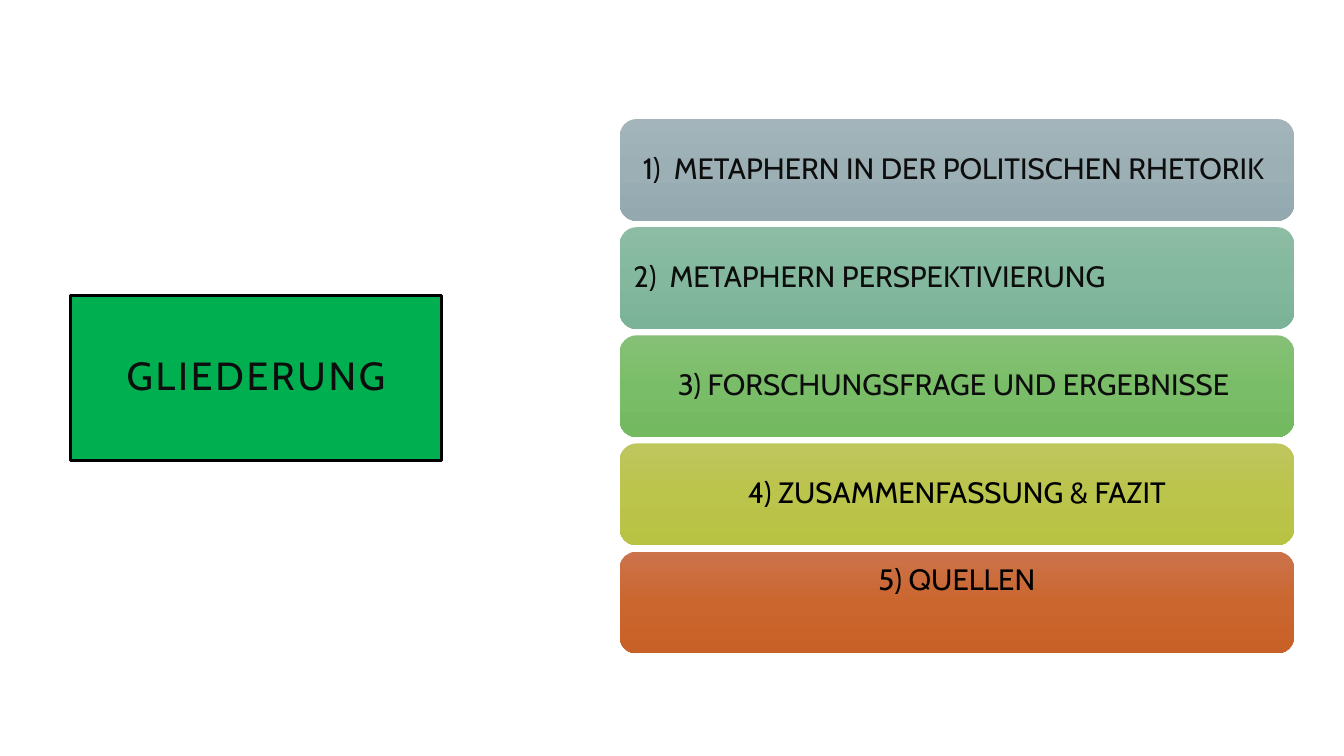
from copy import deepcopy

from pptx import Presentation
from pptx.dml.color import RGBColor
from pptx.enum.shapes import MSO_SHAPE
from pptx.enum.text import MSO_ANCHOR, MSO_AUTO_SIZE, PP_ALIGN
from pptx.util import Pt

FONT = "Cabin"
DARK, BLACK = "0D0D0D", "000000"
CENTER, LEFT = PP_ALIGN.CENTER, PP_ALIGN.LEFT
MIDDLE, TOP = MSO_ANCHOR.MIDDLE, MSO_ANCHOR.TOP

# Text, text colour, alignment, anchor, gradient from top to bottom
CHAPTERS = [
    ("1)  METAPHERN IN DER POLITISCHEN RHETORIK ", DARK, CENTER, MIDDLE,
     ("A3B5BB", "9BAFB5", "93A9AF")),
    ("2)  METAPHERN PERSPEKTIVIERUNG", DARK, LEFT, MIDDLE,
     ("8DBCA5", "83B89E", "7BB398")),
    ("3) FORSCHUNGSFRAGE UND ERGEBNISSE ", DARK, CENTER, MIDDLE,
     ("85C076", "7ABD68", "73B960")),
    ("4) ZUSAMMENFASSUNG & FAZIT", BLACK, CENTER, MIDDLE,
     ("BEC65E", "BBC44B", "B8C243")),
    ("5) QUELLEN", BLACK, CENTER, TOP,
     ("CC734B", "CB662F", "C86128")),
]
BAR_LEFT, BAR_TOP, BAR_WIDTH, BAR_HEIGHT = 442.6, 85, 481.8, 72.7
BAR_PITCH = 77.25


def rgb(hex_color):
    return RGBColor.from_string(hex_color)


def write(shape, text, size, color, align, anchor, inset):
    frame = shape.text_frame
    frame.text = text
    frame.word_wrap = True
    frame.auto_size = MSO_AUTO_SIZE.NONE
    frame.vertical_anchor = anchor
    frame.margin_left = frame.margin_right = Pt(inset)
    frame.margin_top = frame.margin_bottom = Pt(inset)
    paragraph = frame.paragraphs[0]
    paragraph.alignment = align
    paragraph.line_spacing = 0.9
    font = paragraph.runs[0].font
    font.name, font.size, font.bold = FONT, Pt(size), False
    font.color.rgb = rgb(color)


def fill_downwards(shape, colors):
    """Fill with a three-stop gradient that runs from top to bottom."""
    fill = shape.fill
    fill.gradient()
    fill.gradient_angle = 270
    first_stop = shape._element.spPr.xpath("./a:gradFill/a:gsLst/a:gs")[0]
    first_stop.addnext(deepcopy(first_stop))
    for stop, position, color in zip(fill.gradient_stops, (0, 0.5, 1), colors):
        stop.position = position
        stop.color.rgb = rgb(color)


def format_title(title):
    title.left, title.top = Pt(50.4), Pt(211)
    title.width, title.height = Pt(265), Pt(118)
    title.fill.solid()
    title.fill.fore_color.rgb = rgb("00B050")
    title.line.color.rgb = rgb(BLACK)
    title.line.width = Pt(2.5)
    write(title, "GLIEDERUNG", 28, DARK, CENTER, MIDDLE, 14.4)
    letter_spacing = "200"
    run = title.text_frame.paragraphs[0].runs[0]
    run.font._element.set("spc", letter_spacing)


def add_chapter_bar(slide, top, text, color, align, anchor, gradient):
    bar = slide.shapes.add_shape(
        MSO_SHAPE.ROUNDED_RECTANGLE,
        Pt(BAR_LEFT), Pt(top), Pt(BAR_WIDTH), Pt(BAR_HEIGHT))
    bar.shadow.inherit = False
    bar.line.fill.background()
    fill_downwards(bar, gradient)
    write(bar, text, 21, color, align, anchor, 6.3)


def main():
    presentation = Presentation()
    presentation.slide_width, presentation.slide_height = Pt(960), Pt(540)
    title_only = presentation.slide_layouts[5]
    slide = presentation.slides.add_slide(title_only)
    format_title(slide.shapes.title)
    for index, chapter in enumerate(CHAPTERS):
        add_chapter_bar(slide, BAR_TOP + index * BAR_PITCH, *chapter)
    presentation.save("out.pptx")


if __name__ == "__main__":
    main()
